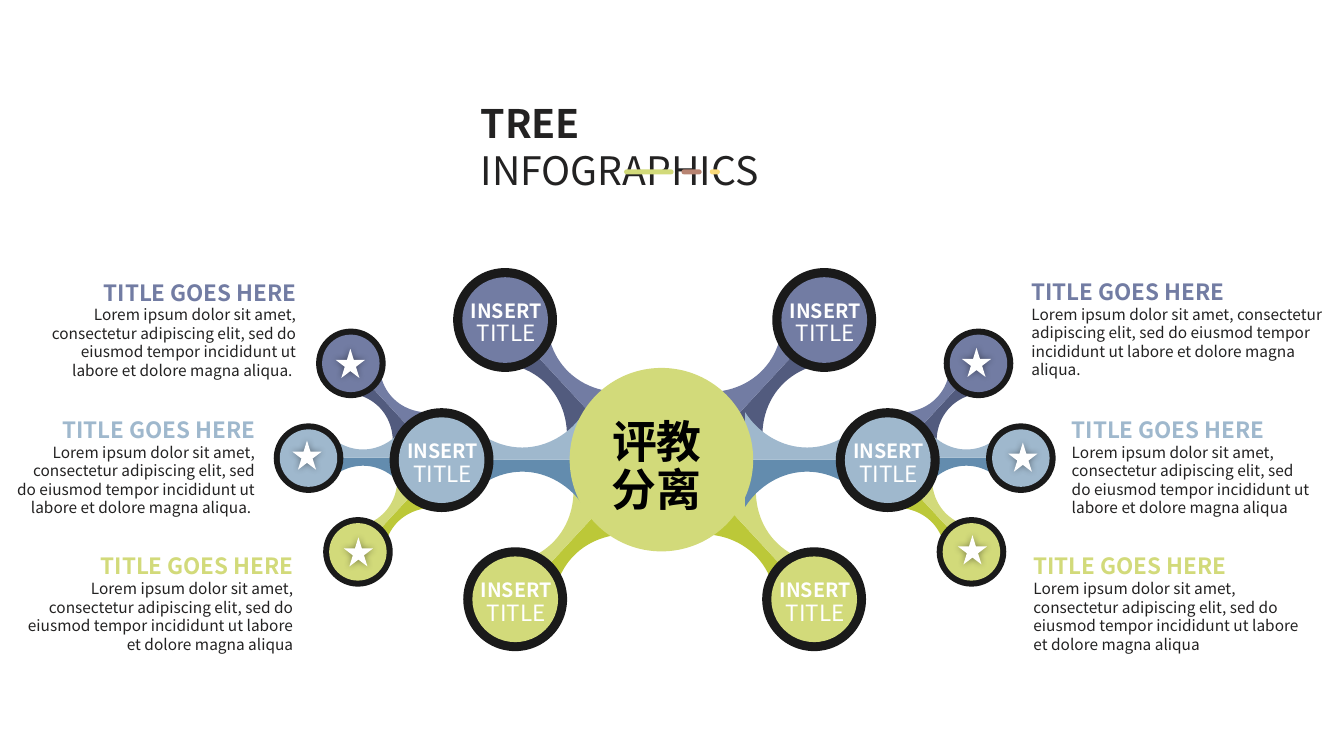
import math
import pptx
import pptx.dml.color
import pptx.enum.shapes
import pptx.enum.text
import pptx.oxml.ns
import pptx.util
from lxml import etree

SHAPES = pptx.enum.shapes.MSO_SHAPE
ALIGN = pptx.enum.text.PP_ALIGN
ANCHOR = pptx.enum.text.MSO_ANCHOR
INK, WHITE, RING = "232222", "FFFFFF", "1A1A1A"
VIOLET, BLUE, GREEN = "727CA3", "9FB8CD", "D2DA7A"
MIRROR = 131.85
LOREM = ("Lorem ipsum dolor sit amet, consectetur adipiscing elit, sed do eiusmod "
         "tempor incididunt ut labore et dolore magna aliqua")
qn = pptx.oxml.ns.qn


def color(value):
    return pptx.dml.color.RGBColor.from_string(value)


class TreeSlide:
    font = "Noto Sans CJK SC"
    cell = pptx.util.Inches(0.1)
    branch_corners = [(-6.15, 4.7), (0, 1.2), (6.15, 4.7), (6.15, 0), (-6.15, 0)]
    branch_controls = [[(-4.8, 2.6), (-2.5, 1.2)], [(2.5, 1.2), (4.8, 2.6)]]

    def __init__(self, presentation):
        self.slide = presentation.slides.add_slide(presentation.slide_layouts[6])
        self.slide.background.fill.solid()
        self.slide.background.fill.fore_color.rgb = color(WHITE)

    def grid(self, *values):
        return [round(value * self.cell) for value in values]

    def paint(self, shape, fill):
        shape.shadow.inherit = False
        shape.fill.solid()
        shape.fill.fore_color.rgb = color(fill)
        shape.line.fill.background()
        return shape

    def preset(self, kind, center, width, height, fill):
        x, y = center
        box = self.grid(x - width / 2, y - height / 2, width, height)
        return self.paint(self.slide.shapes.add_shape(kind, *box), fill)

    def circle(self, center, size, fill):
        return self.preset(SHAPES.OVAL, center, size, size, fill)

    def ringed_circle(self, center, size, inner, fill):
        self.circle(center, size, RING)
        self.circle(center, inner, fill)

    def star(self, center):
        shape = self.preset(SHAPES.STAR_5_POINT, center, 2.9, 2.9, WHITE)
        effects = shape._element.spPr.find(qn("a:effectLst"))
        shadow = etree.SubElement(effects, qn("a:outerShdw"), blurRad=str(pptx.util.Pt(5)), rotWithShape="0")
        tint = etree.SubElement(shadow, qn("a:srgbClr"), val="000000")
        etree.SubElement(tint, qn("a:alpha"), val="40000")

    def dash(self, left, width, fill):
        shape = self.preset(SHAPES.ROUNDED_RECTANGLE, (left + width / 2, 17.05), width, 0.5, fill)
        shape.adjustments[0] = 0.5

    def branch_half(self, center, angle, scale, side, fill):
        cosine, sine = math.cos(math.radians(angle)), math.sin(math.radians(angle))

        def place(point):
            x, y = point[0] * scale, point[1] * scale * side
            return self.grid(center[0] + x * cosine - y * sine, center[1] + x * sine + y * cosine)

        corners = [place(corner) for corner in self.branch_corners]
        builder = self.slide.shapes.build_freeform(*corners[0], scale=1.0)
        builder.add_line_segments(corners[1:], close=True)
        shape = self.paint(builder.convert_to_shape(), fill)
        edges = list(shape._element.iter(qn("a:lnTo")))
        for edge, controls in zip(edges, self.branch_controls):
            curve = etree.Element(qn("a:cubicBezTo"))
            for x, y in map(place, controls):
                etree.SubElement(curve, qn("a:pt"), x=str(x - shape.left), y=str(y - shape.top))
            curve.append(edge[0])
            edge.getparent().replace(edge, curve)

    def branch(self, center, angle, scale, light, dark):
        self.branch_half(center, angle, scale, 1, dark)
        self.branch_half(center, angle, scale, -1, light)

    def text(self, box, runs, align=ALIGN.LEFT, anchor=ANCHOR.MIDDLE, spacing=None,
             after=None, tight=False, grow=False):
        frame = self.slide.shapes.add_textbox(*self.grid(*box)).text_frame
        frame.word_wrap = True
        frame.vertical_anchor = anchor
        if grow:
            frame.auto_size = pptx.enum.text.MSO_AUTO_SIZE.SHAPE_TO_FIT_TEXT
        if tight:
            frame.margin_left = frame.margin_right = frame.margin_top = frame.margin_bottom = 0
        paragraph = frame.paragraphs[0]
        paragraph.alignment = align
        paragraph.line_spacing = spacing
        paragraph.space_after = after
        for words, size, ink, bold in runs:
            run = paragraph.add_run()
            run.text = words.rstrip("\n")
            run.font.name = self.font
            run.font.size = pptx.util.Pt(size)
            run.font.bold = bold
            run.font.color.rgb = color(ink)
            etree.SubElement(run._r.get_or_add_rPr(), qn("a:ea"), typeface=self.font)
            if words.endswith("\n"):
                paragraph.add_line_break()

    def label(self, x, y):
        self.text((x - 5.3, y - 1.55, 10.6, 3.1),
                  [("INSERT ", 14, WHITE, True), ("TITLE", 16, WHITE, False)],
                  ALIGN.CENTER, spacing=0.9)

    def caption(self, box, fill, ending, align):
        self.text(box, [("TITLE GOES HERE\n", 16, fill, True), (LOREM + ending, 11, INK, False)],
                  align, after=pptx.util.Pt(12), tight=True, grow=True)


LIMBS = [
    (GREEN, "BCC838", 47.2, (75.95, 54.45), (80.75, 59.45), (93.1, 51.35), (96.35, 54.75)),
    (VIOLET, "525B7E", -47.2, (76.6, 37.45), (81.75, 31.75), (93.55, 39.95), (97.05, 36.05)),
    (BLUE, "638CAE", 0, (80.05, 45.6), (88.05, 45.65), (95.85, 45.4), (101.25, 45.45)),
]
STARS = [(34.75, 36.05), (30.45, 45.15), (35.55, 54.75), (96.85, 35.95), (101.45, 45.35), (96.45, 54.55)]
CAPTIONS = [
    ((102.5, 55.7, 27.5, 8.2), GREEN, "", ALIGN.LEFT),
    ((102.3, 28.5, 28.9, 8.2), VIOLET, ".", ALIGN.LEFT),
    ((106.3, 41.2, 23.7, 10.1), BLUE, "", ALIGN.LEFT),
    ((1.4, 55.7, 27.7, 8.2), GREEN, "", ALIGN.RIGHT),
    ((5.1, 27.6, 24.3, 10.1), VIOLET, ". ", ALIGN.RIGHT),
    ((1.4, 41.2, 23.9, 10.1), BLUE, ". ", ALIGN.RIGHT),
]
DASHES = [(61.9, 4.9, GREEN), (67.6, 2, "B88472"), (70.4, 1, "FADA7A")]


def draw_side(tree, mirrored):
    def place(point):
        return (MIRROR - point[0], point[1]) if mirrored else point

    turn = -1 if mirrored else 1
    for light, dark, angle, limb, hub, twig, leaf in LIMBS:
        tree.branch(place(twig), angle * turn, 0.67, light, dark)
    for light, dark, angle, limb, hub, twig, leaf in LIMBS:
        tree.ringed_circle(place(leaf), 6.9, 5.7, light)
        tree.branch(place(limb), angle * turn, 1, light, dark)
    for light, dark, angle, limb, hub, twig, leaf in LIMBS:
        tree.ringed_circle(place(hub), 10.3, 8.5, light)
        tree.label(place(hub)[0] + 0.1, hub[1] + 0.4)


def main():
    presentation = pptx.Presentation()
    presentation.slide_width = pptx.util.Inches(13.33)
    presentation.slide_height = pptx.util.Inches(7.5)
    tree = TreeSlide(presentation)
    for mirrored in (False, True):
        draw_side(tree, mirrored)
    tree.circle((65.6, 45.6), 18.2, GREEN)
    tree.text((58.1, 44.9, 14.1, 3.1), [("评教分离", 32, "000000", True)], ALIGN.CENTER, spacing=0.9)
    for center in STARS:
        tree.star(center)
    for caption in CAPTIONS:
        tree.caption(*caption)
    tree.text((46.7, 9.4, 40, 5.7), [("TREE ", 28, INK, True), ("INFOGRAPHICS", 28, INK, False)],
              anchor=ANCHOR.TOP, grow=True)
    for dash in DASHES:
        tree.dash(*dash)
    presentation.save("out.pptx")


if __name__ == "__main__":
    main()
